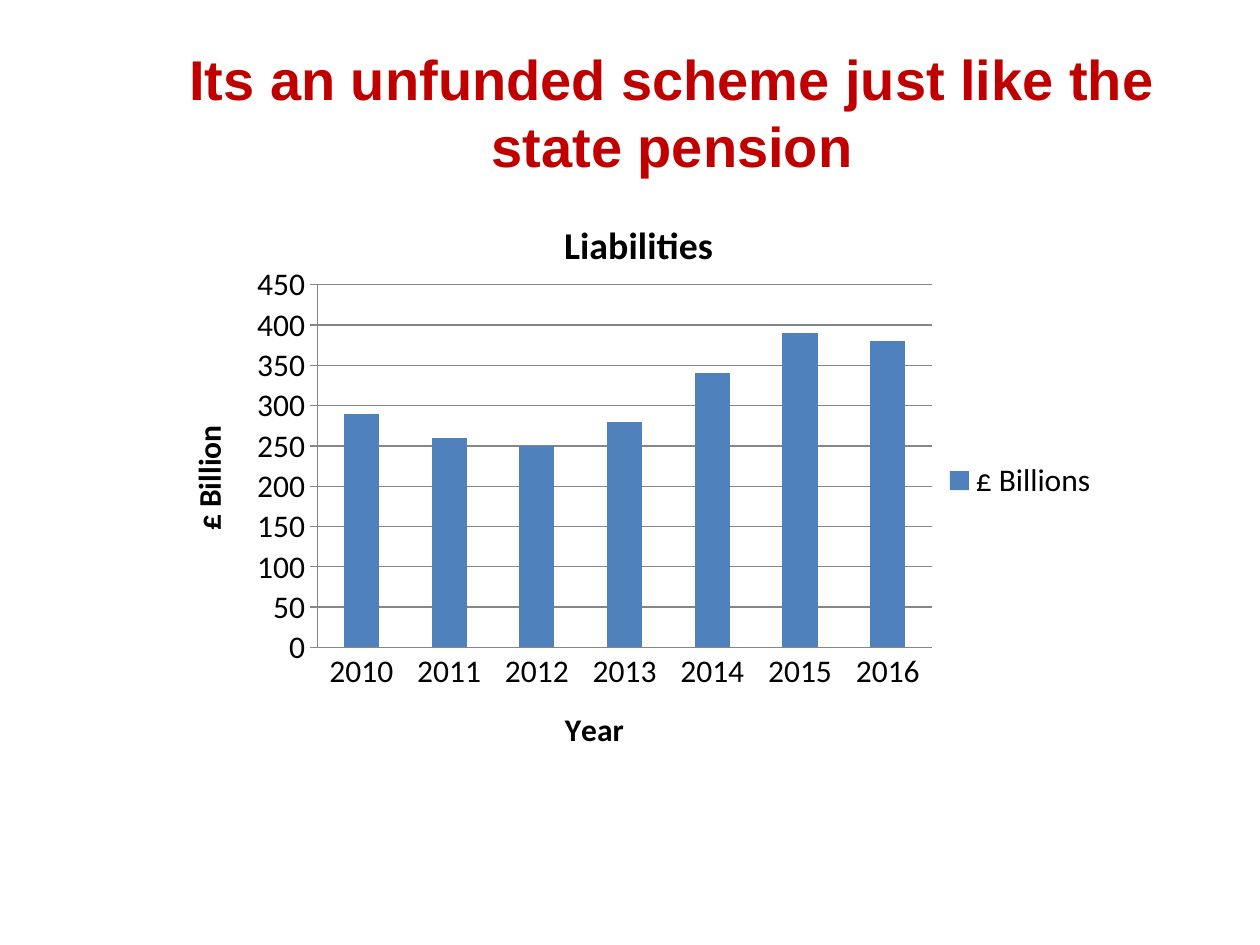
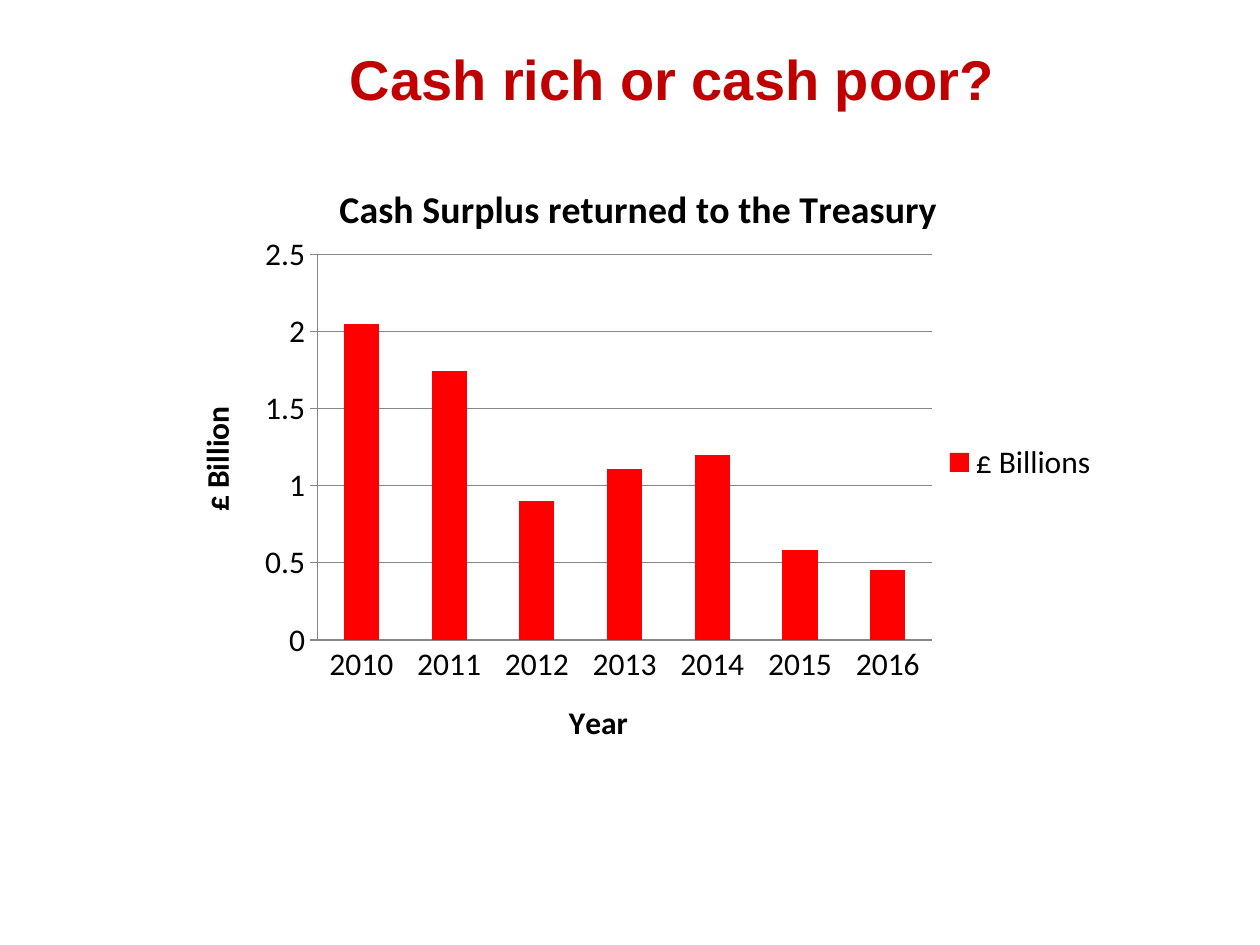
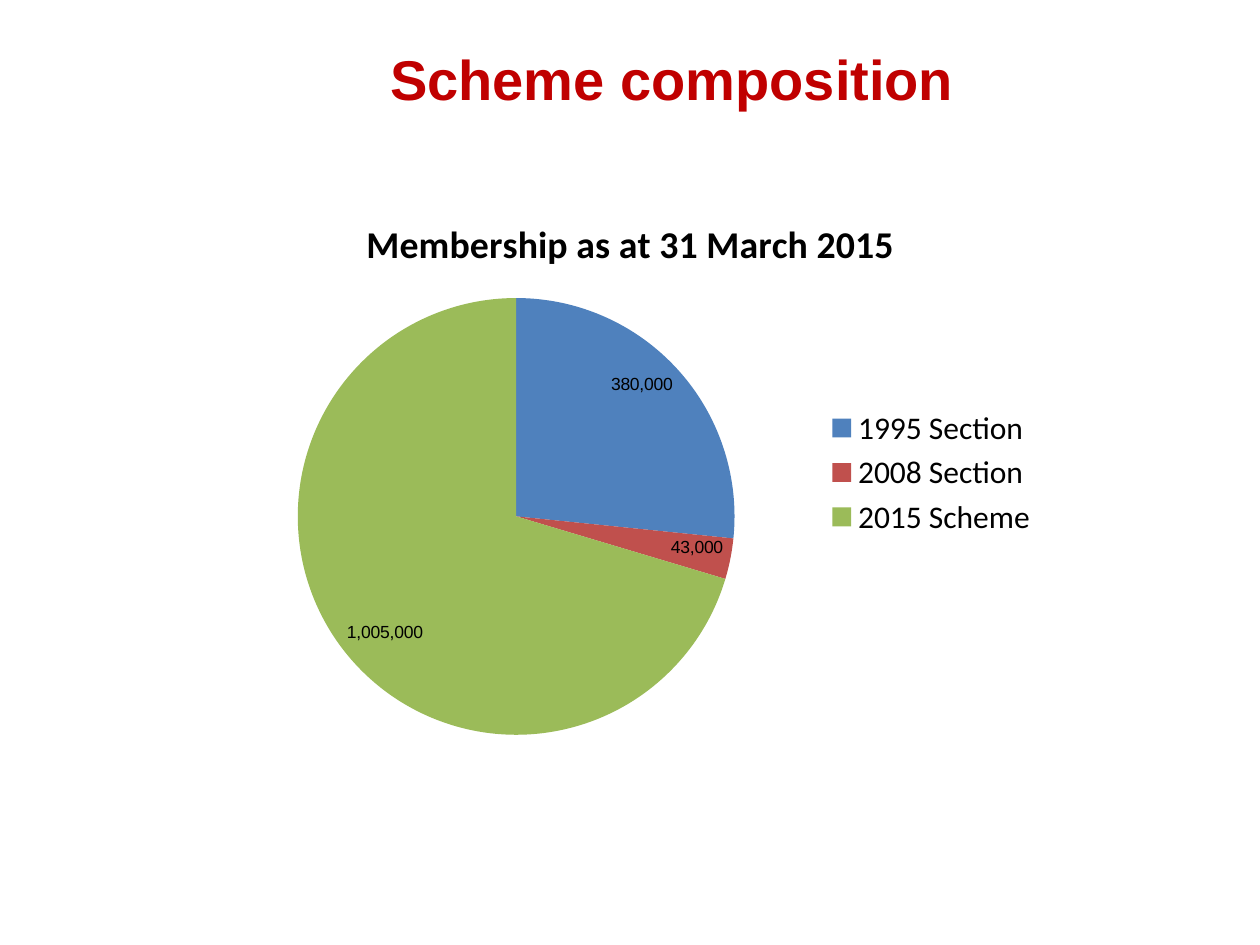
from lxml.etree import SubElement
from pptx import Presentation
from pptx.chart.data import CategoryChartData
from pptx.dml.color import RGBColor
from pptx.enum.chart import XL_CHART_TYPE as ChartType
from pptx.enum.chart import XL_LABEL_POSITION as LabelPosition
from pptx.enum.chart import XL_LEGEND_POSITION as LegendPosition
from pptx.enum.chart import XL_TICK_MARK as TickMark
from pptx.enum.text import MSO_ANCHOR, MSO_AUTO_SIZE, PP_ALIGN
from pptx.oxml.ns import qn
from pptx.util import Inches, Pt

COLORS = {
    "title": "C00000",
    "text": "000000",
    "grid": "868686",
    "blue": "4F81BD",
    "red": "FF0000",
    "brick": "C0504D",
    "green": "9BBB59",
}
TITLE_FONT = "Arial"
CHART_FONT = "Calibri"
YEARS = [str(year) for year in range(2010, 2017)]
PLOT_AREA = {"x": 0.16, "y": 0.16, "w": 0.65, "h": 0.63}


def color(name):
    """Return the named colour."""
    return RGBColor.from_string(COLORS[name])


def style_font(font, name, size, color_name="text", bold=False):
    """Set the face, size, colour and weight of a font."""
    font.name = name
    font.size = Pt(size)
    font.bold = bold
    font.color.rgb = color(color_name)


def fill_solid(part, color_name):
    """Fill a series or point with one colour."""
    part.format.fill.solid()
    part.format.fill.fore_color.rgb = color(color_name)


def add_titled_slide(presentation, text, title_height):
    """Add a title-only slide with a red heading at the top."""
    slide = presentation.slides.add_slide(presentation.slide_layouts[5])
    title = slide.shapes.title
    title.left, title.top = Inches(1.32), Inches(0.3)
    title.width, title.height = Inches(8.03), Inches(title_height)
    frame = title.text_frame
    frame.text = text
    frame.word_wrap = True
    frame.auto_size = MSO_AUTO_SIZE.NONE
    frame.vertical_anchor = MSO_ANCHOR.TOP
    paragraph = frame.paragraphs[0]
    paragraph.alignment = PP_ALIGN.CENTER
    style_font(paragraph.font, TITLE_FONT, 32, "title", bold=True)
    return slide


def write_chart_heading(owner, text, size):
    """Write the bold title of a chart or an axis."""
    frame = owner.text_frame
    frame.text = text
    style_font(frame.paragraphs[0].font, CHART_FONT, size, bold=True)


def add_titled_chart(slide, box, chart_type, heading, categories, series_name, values):
    """Add a chart with one series, a heading and a legend on the right."""
    data = CategoryChartData()
    data.categories = categories
    data.add_series(series_name, values)
    frame = slide.shapes.add_chart(chart_type, *map(Inches, box), data)
    chart = frame.chart
    style_font(chart.font, CHART_FONT, 18)
    chart.has_title = True
    write_chart_heading(chart.chart_title, heading, 21.6)
    chart.chart_title.include_in_layout = False
    chart.has_legend = True
    chart.legend.position = LegendPosition.RIGHT
    chart.legend.include_in_layout = False
    return chart


def place_plot_area(chart):
    """Fix the inner plot area as fractions of the chart."""
    plot_area = chart._chartSpace.chart.plotArea
    for old_layout in plot_area.findall(qn("c:layout")):
        plot_area.remove(old_layout)
    layout = SubElement(plot_area, qn("c:layout"))
    plot_area.insert(0, layout)
    manual = SubElement(layout, qn("c:manualLayout"))
    settings = {"layoutTarget": "inner", "xMode": "edge", "yMode": "edge", **PLOT_AREA}
    for tag, value in settings.items():
        SubElement(manual, qn(f"c:{tag}")).set("val", str(value))


def style_axis(axis, heading, tick_mark):
    """Give an axis its title, tick marks and grey line."""
    axis.has_title = True
    write_chart_heading(axis.axis_title, heading, 18)
    axis.major_tick_mark = tick_mark
    axis.minor_tick_mark = TickMark.NONE
    axis.format.line.color.rgb = color("grid")
    axis.format.line.width = Pt(0.75)


def add_yearly_columns(slide, box, heading, values, scale, color_name):
    """Add a column chart of billions of pounds by year."""
    chart = add_titled_chart(
        slide, box, ChartType.COLUMN_CLUSTERED, heading, YEARS, "£ Billions", values
    )
    place_plot_area(chart)
    style_axis(chart.category_axis, "Year", TickMark.NONE)
    value_axis = chart.value_axis
    style_axis(value_axis, "£ Billion", TickMark.CROSS)
    value_axis.minimum_scale = 0
    value_axis.maximum_scale, value_axis.major_unit = scale
    grid_line = value_axis.major_gridlines.format.line
    grid_line.color.rgb = color("grid")
    grid_line.width = Pt(0.75)
    plot = chart.plots[0]
    plot.vary_by_categories = False
    plot.gap_width = 150
    fill_solid(plot.series[0], color_name)


def add_membership_pie(slide, box):
    """Add the pie of members in each section of the scheme."""
    sections = {
        "1995 Section": (380000, "blue"),
        "2008 Section": (43000, "brick"),
        "2015 Scheme": (1005000, "green"),
    }
    members = [count for count, _ in sections.values()]
    chart = add_titled_chart(
        slide, box, ChartType.PIE, "Membership as at 31 March 2015",
        list(sections), "Series 1", members,
    )
    plot = chart.plots[0]
    plot.vary_by_categories = True
    for index, (_, color_name) in enumerate(sections.values()):
        fill_solid(plot.series[0].points[index], color_name)
    plot.has_data_labels = True
    labels = plot.data_labels
    labels.show_value = True
    labels.show_percentage = False
    labels.number_format = "#,##0"
    labels.number_format_is_linked = False
    labels.position = LabelPosition.INSIDE_END
    style_font(labels.font, TITLE_FONT, 10)


def main():
    """Build the three slides and save them."""
    presentation = Presentation()
    presentation.slide_width, presentation.slide_height = Inches(10), Inches(7.5)

    slide = add_titled_slide(
        presentation, "Its an unfunded scheme just like the state pension", 1.45
    )
    add_yearly_columns(
        slide, (1.32, 1.53, 7.5, 4.57), "Liabilities",
        [290, 260, 250, 280, 340, 390, 380], (450, 50), "blue",
    )

    slide = add_titled_slide(presentation, "Cash rich or cash poor?", 1.45)
    add_yearly_columns(
        slide, (1.32, 1.24, 7.5, 4.86), "Cash Surplus returned to the Treasury",
        [2.05, 1.74, 0.9, 1.11, 1.2, 0.58, 0.45], (2.5, 0.5), "red",
    )

    slide = add_titled_slide(presentation, "Scheme composition", 0.9)
    add_membership_pie(slide, (1.67, 1.53, 6.67, 4.44))

    presentation.save("out.pptx")


if __name__ == "__main__":
    main()
